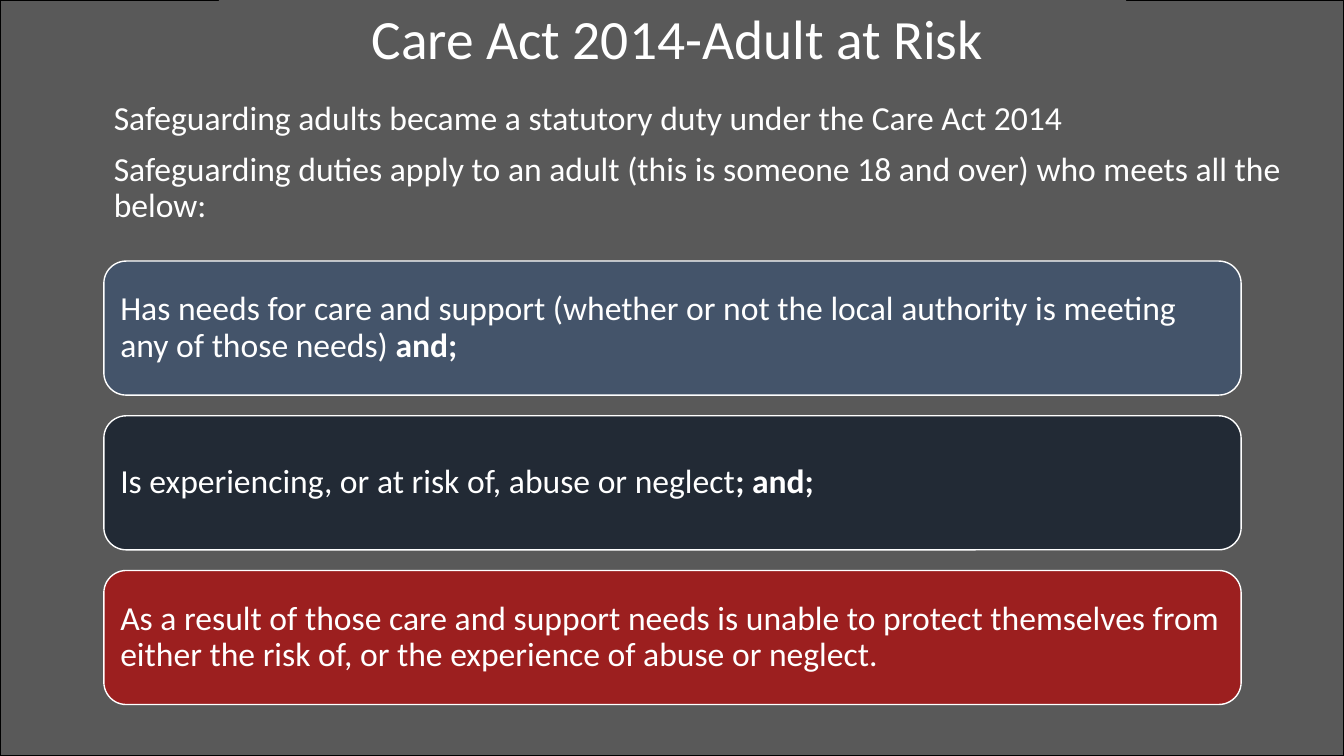
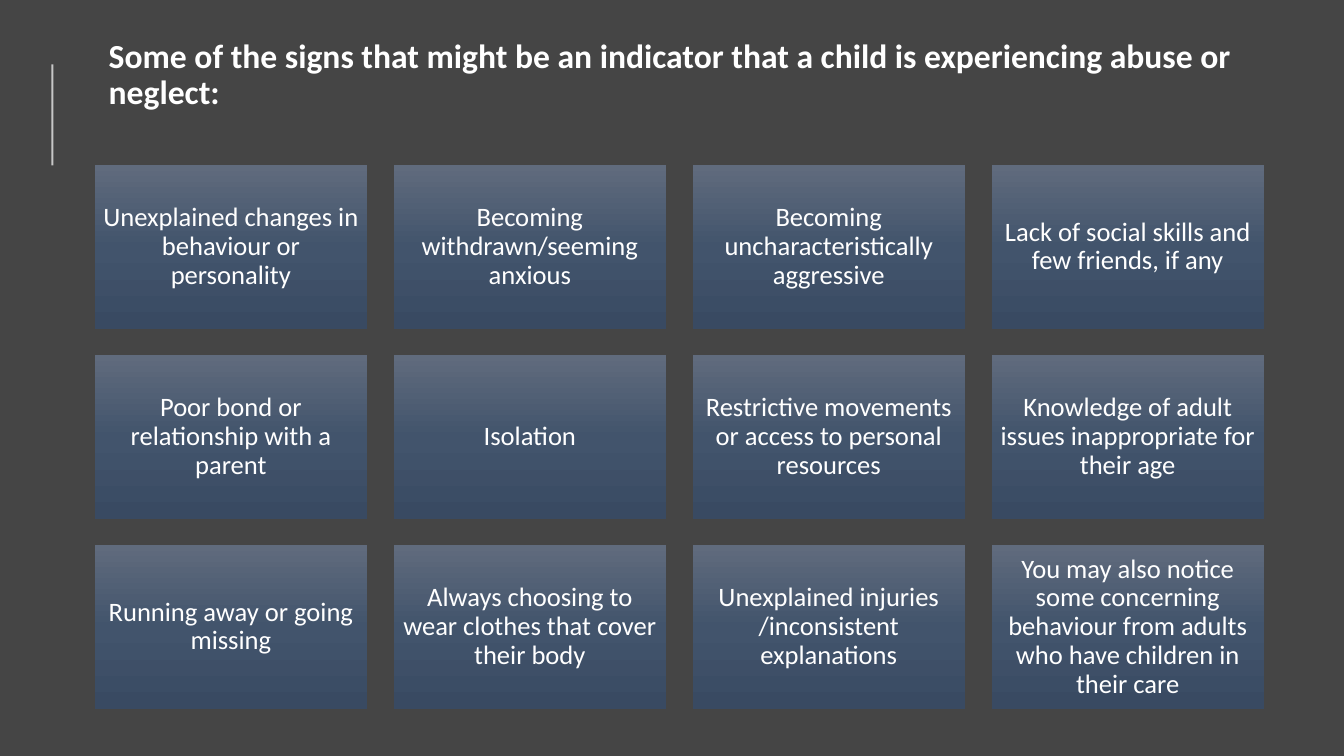
from copy import deepcopy
from dataclasses import dataclass

from lxml import etree
from pptx import Presentation
from pptx.dml.color import RGBColor
from pptx.enum.shapes import MSO_CONNECTOR, MSO_SHAPE
from pptx.enum.text import MSO_ANCHOR, PP_ALIGN
from pptx.oxml.ns import qn
from pptx.util import Inches, Pt

WHITE = RGBColor(0xFF, 0xFF, 0xFF)
BLACK = RGBColor(0x00, 0x00, 0x00)
GREY = RGBColor(0x59, 0x59, 0x59)
DARK = RGBColor(0x45, 0x45, 0x45)
SLATE = RGBColor(0x44, 0x54, 0x6A)
NAVY = RGBColor(0x22, 0x2A, 0x35)
RED = RGBColor(0xC0, 0x00, 0x00)
SHADES = (
    RGBColor(0x60, 0x6B, 0x7D),
    RGBColor(0x42, 0x54, 0x6C),
    RGBColor(0x39, 0x4A, 0x62),
)
FONT = "Calibri"
WIDTH, HEIGHT = 13.33, 7.5


@dataclass(frozen=True)
class Box:
    left: float
    top: float
    width: float
    height: float

    def place(self) -> tuple:
        return tuple(Inches(v) for v in (self.left, self.top, self.width, self.height))


@dataclass(frozen=True)
class Duty:
    text: str
    end: str
    fill: RGBColor
    alpha: int = 100


DUTIES = (
    Duty("Has needs for care and support (whether or not the local authority "
         "is meeting any of those needs) ", "and;", SLATE),
    Duty("Is experiencing, or at risk of, abuse or neglect", "; and;", NAVY),
    Duty("As a result of those care and support needs is unable to protect themselves "
         "from either the risk of, or the experience of abuse or neglect.", "", RED, 65),
)
INTRO = (
    "Safeguarding adults became a statutory duty under the Care Act 2014",
    "Safeguarding duties apply to an adult (this is someone 18 and over) "
    "who meets all the below:",
)
SIGNS = (
    "Unexplained changes in behaviour or personality",
    "Becoming withdrawn/seeming anxious",
    "Becoming uncharacteristically aggressive",
    "Lack of social skills and few friends, if any",
    "Poor bond or relationship with a parent",
    "Isolation",
    "Restrictive movements or access to personal resources",
    "Knowledge of adult issues inappropriate for their age",
    "Running away or going missing",
    "Always choosing to wear clothes that cover their body",
    "Unexplained injuries /inconsistent explanations",
    "You may also notice some concerning behaviour from adults who have "
    "children in their care",
)


def fade(props, alpha: int) -> None:
    """Make the first solid colour below props partly transparent."""
    color = props.find(".//" + qn("a:srgbClr"))
    etree.SubElement(color, qn("a:alpha"), val=str(alpha * 1000))


def shade(shape) -> None:
    """Fill the shape from top to bottom with the three shades."""
    shape.fill.gradient()
    shape.fill.gradient_angle = 270
    first, last = shape.fill.gradient_stops
    first.color.rgb, last.color.rgb = SHADES[0], SHADES[2]
    first.position, last.position = 0, 1
    stops = shape._element.spPr.find(".//" + qn("a:gsLst"))
    stops.insert(1, deepcopy(stops[0]))
    middle = shape.fill.gradient_stops[1]
    middle.color.rgb, middle.position = SHADES[1], 0.5


def panel(slide, box: Box, fill: RGBColor | None = None, line: RGBColor | None = None,
          kind=MSO_SHAPE.RECTANGLE):
    """Add a flat shape; without a fill it takes the shades."""
    shape = slide.shapes.add_shape(kind, *box.place())
    shape.shadow.inherit = False
    if fill is None:
        shade(shape)
    else:
        shape.fill.solid()
        shape.fill.fore_color.rgb = fill
    if line is None:
        shape.line.fill.background()
    else:
        shape.line.color.rgb = line
        shape.line.width = Pt(1)
    return shape


def write(shape, lines: tuple, size: float, align=PP_ALIGN.LEFT,
          anchor=MSO_ANCHOR.MIDDLE, inset: float = 0.1, bold: bool = False,
          before: float = 0) -> None:
    frame = shape.text_frame
    frame.word_wrap = True
    frame.vertical_anchor = anchor
    frame.margin_left = frame.margin_right = Inches(inset)
    for index, line in enumerate(lines):
        para = frame.paragraphs[0] if index == 0 else frame.add_paragraph()
        para.text = line
        para.alignment = align
        para.line_spacing = 0.9
        para.space_before = Pt(before)
        font = para.font
        font.name, font.size, font.bold = FONT, Pt(size), bold
        font.color.rgb = WHITE


def adults(slide) -> None:
    panel(slide, Box(0, 0, WIDTH, HEIGHT), GREY, BLACK)
    title = panel(slide, Box(2.17, 0, 9, 0.86), GREY)
    write(title, ("Care Act 2014-Adult at Risk",), 39.6, PP_ALIGN.CENTER)
    title.text_frame.margin_left = Inches(0.2)
    title.text_frame.margin_bottom = Inches(0.09)
    for row, duty in enumerate(DUTIES):
        box = Box(1.03, 2.59 + row * 1.535, 11.28, 1.33)
        card = panel(slide, box, duty.fill, WHITE, MSO_SHAPE.ROUNDED_RECTANGLE)
        if duty.alpha < 100:
            fade(card._element.spPr, duty.alpha)
        write(card, (duty.text,), 24)
        if duty.end:
            run = card.text_frame.paragraphs[0].add_run()
            run.text = duty.end
            run.font.bold = True
    intro = slide.shapes.add_textbox(*Box(1.03, 0.96, 12.08, 1.5).place())
    write(intro, INTRO, 24, anchor=MSO_ANCHOR.TOP, before=10)


def signs(slide) -> None:
    slide.background.fill.solid()
    slide.background.fill.fore_color.rgb = DARK
    title = slide.shapes.add_textbox(*Box(0.98, 0.34, 12.09, 1.25).place())
    write(title, ("Some of the signs that might be an indicator that a child is "
                  "experiencing abuse or neglect:",), 24, anchor=MSO_ANCHOR.TOP, bold=True)
    rule = slide.shapes.add_connector(
        MSO_CONNECTOR.STRAIGHT, Inches(0.52), Inches(1.64), Inches(0.52), Inches(0.64))
    rule.line.color.rgb = WHITE
    rule.line.width = Pt(1.5)
    props = rule._element.spPr
    fade(props, 70)
    etree.SubElement(props, qn("a:effectLst"))

    cols, wide, high, gap = 4, 2.7, 1.62, 0.265
    for index, sign in enumerate(SIGNS):
        row, col = divmod(index, cols)
        box = Box(0.94 + col * (wide + gap), 1.64 + row * (high + gap), wide, high)
        write(panel(slide, box), (sign,), 19, PP_ALIGN.CENTER, inset=0.08)


def main() -> None:
    deck = Presentation()
    deck.slide_width, deck.slide_height = Inches(WIDTH), Inches(HEIGHT)
    for draw in (adults, signs):
        draw(deck.slides.add_slide(deck.slide_layouts[6]))
    deck.save("out.pptx")


if __name__ == "__main__":
    main()
